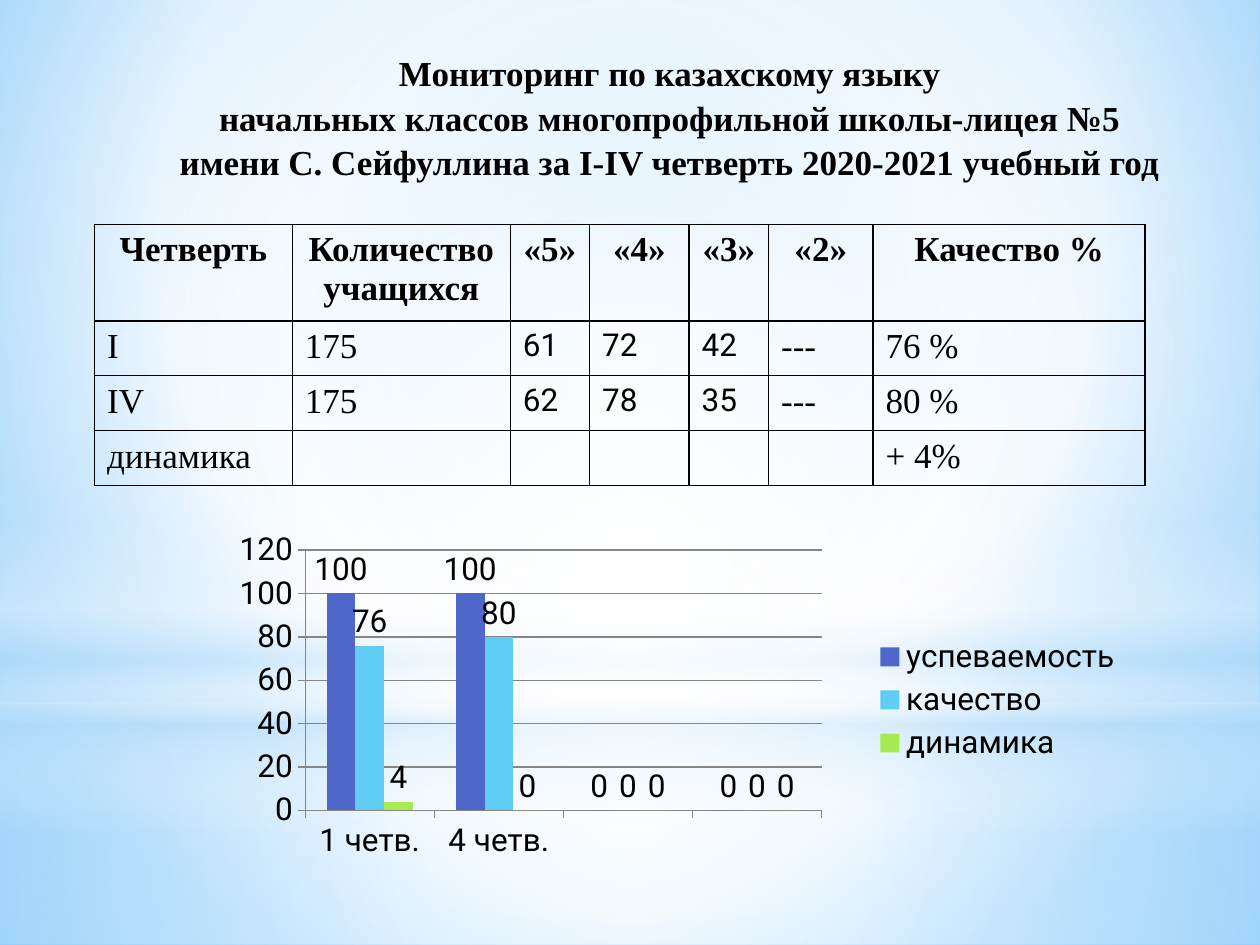
"""Build the Kazakh language monitoring slide with its table and chart."""
from dataclasses import dataclass

from lxml.etree import SubElement
from pptx import Presentation
from pptx.chart.data import CategoryChartData
from pptx.dml.color import RGBColor
from pptx.enum.chart import XL_CHART_TYPE, XL_LABEL_POSITION, XL_LEGEND_POSITION, XL_TICK_MARK
from pptx.enum.shapes import MSO_SHAPE
from pptx.enum.text import PP_ALIGN
from pptx.oxml import parse_xml
from pptx.oxml.ns import nsdecls, qn
from pptx.util import Inches, Pt

COLORS = {
    "text": "000000", "axis": "868686", "white": "FFFFFF", "haze": "B4DCFA",
    "sky": "9ED5FF", "deep": "5BB9FF",
    "progress": "4E67C8", "quality": "5ECCF3", "change": "A7EA52",
}
SERIF, SANS = "Times New Roman", "Roboto"
SLIDE_WIDTH, SLIDE_HEIGHT = Inches(10), Inches(7.5)
CENTER = (50, 50, 50, 50)


@dataclass(frozen=True)
class Area:
    """Position and size in percent of the slide."""
    left: float
    top: float
    width: float
    height: float

    def lengths(self) -> tuple[int, ...]:
        """Return left, top, width and height in EMU."""
        return (across(self.left), down(self.top), across(self.width), down(self.height))


@dataclass(frozen=True)
class Gradient:
    """Stops of position, color name and opacity; linear when focus is None."""
    stops: tuple[tuple[int, str, int], ...]
    focus: tuple[int, ...] | None = CENTER


@dataclass(frozen=True)
class Glow:
    """One translucent background shape."""
    preset: MSO_SHAPE
    area: Area
    gradient: Gradient


@dataclass(frozen=True)
class Series:
    """One chart series."""
    name: str
    values: tuple[int, ...]
    color: str


BACKDROP = Gradient(((0, "sky", 100), (60, "white", 100), (100, "deep", 100)), (20, 10, 20, 60))
GLOWS = (
    Glow(MSO_SHAPE.RECTANGLE, Area(0, 74.4, 100, 25.6),
         Gradient(((0, "white", 91), (37, "white", 76), (100, "haze", 79)))),
    Glow(MSO_SHAPE.RECTANGLE, Area(0, 0, 100, 74.4),
         Gradient(((0, "white", 89), (48, "white", 62), (100, "haze", 79)))),
    Glow(MSO_SHAPE.RECTANGLE, Area(0, 54.93, 100, 33.33),
         Gradient(((0, "white", 0), (29, "white", 30), (45, "haze", 40),
                   (55, "white", 26), (65, "haze", 60), (100, "white", 0)), None)),
    Glow(MSO_SHAPE.OVAL, Area(0, 23.33, 100, 74.4),
         Gradient(((0, "white", 100), (56, "white", 0)))),
)
TITLE = (
    "Мониторинг по казахскому языку",
    "начальных классов многопрофильной школы-лицея №5 "
    "имени С. Сейфуллина за І-ІV четверть 2020-2021 учебный год",
)
COLUMN_SHARES = (15.7, 17.3, 6.3, 7.9, 6.3, 8.3, 21.6)
ROW_SHARES = (10.2, 5.8, 5.8, 5.8)
SANS_COLUMNS = range(2, 5)
ROWS = (
    ("Четверть", "Количество учащихся", "«5»", "«4»", "«3»", "«2»", "Качество %"),
    ("І", "175", "61", "72", "42", "---", "76 %"),
    ("ІV", "175", "62", "78", "35", "---", "80 %"),
    ("динамика", "", "", "", "", "", "+ 4%"),
)
CATEGORIES = ("1 четв.", "4 четв.", " ", " ")
SERIES = (
    Series("успеваемость", (100, 100, 0, 0), "progress"),
    Series("качество", (76, 80, 0, 0), "quality"),
    Series("динамика", (4, 0, 0, 0), "change"),
)
PLOT_LAYOUT = (("layoutTarget", "inner"), ("xMode", "edge"), ("yMode", "edge"),
               ("x", "0.1"), ("y", "0.08"), ("w", "0.56"), ("h", "0.73"))


def across(percent: float) -> int:
    return round(SLIDE_WIDTH * percent / 100)


def down(percent: float) -> int:
    return round(SLIDE_HEIGHT * percent / 100)


def color(name: str) -> RGBColor:
    return RGBColor.from_string(COLORS[name])


def paint(parent, gradient: Gradient) -> None:
    """Replace the solid fill below parent by a gradient."""
    stops = "".join(
        f'<a:gs pos="{position * 1000}"><a:srgbClr val="{COLORS[name]}">'
        f'<a:alpha val="{opacity * 1000}"/></a:srgbClr></a:gs>'
        for position, name, opacity in gradient.stops)
    if gradient.focus is None:
        direction = '<a:lin ang="5400000" scaled="0"/>'
    else:
        edges = " ".join(f'{side}="{share * 1000}"' for side, share in zip("ltrb", gradient.focus))
        direction = f'<a:path path="circle"><a:fillToRect {edges}/></a:path>'
    fill = parse_xml(f'<a:gradFill {nsdecls("a")} rotWithShape="1">'
                     f'<a:gsLst>{stops}</a:gsLst>{direction}</a:gradFill>')
    parent.replace(parent.find(qn("a:solidFill")), fill)


def add_glow(page, glow: Glow) -> None:
    shape = page.shapes.add_shape(glow.preset, *glow.area.lengths())
    shape.shadow.inherit = False
    shape.line.fill.background()
    shape.fill.solid()
    paint(shape.element.spPr, glow.gradient)


def add_span(para, text: str, size: int = 20, face: str = SERIF, bold: bool = False) -> None:
    span = para.add_run()
    span.text = text
    span.font.size = Pt(size)
    span.font.name = face
    span.font.bold = bold
    span.font.color.rgb = color("text")


def add_title(page, area: Area) -> None:
    frame = page.shapes.add_textbox(*area.lengths()).text_frame
    frame.word_wrap = True
    for index, text in enumerate(TITLE):
        para = frame.add_paragraph() if index else frame.paragraphs[0]
        para.alignment = PP_ALIGN.CENTER
        para.line_spacing = 1.06
        add_span(para, text, bold=True)


def add_borders(cell) -> None:
    properties = cell._tc.get_or_add_tcPr()
    for index, side in enumerate("LRTB"):
        properties.insert(index, parse_xml(
            f'<a:ln{side} {nsdecls("a")} w="12700"><a:solidFill>'
            f'<a:srgbClr val="{COLORS["text"]}"/></a:solidFill></a:ln{side}>'))


def add_marks_table(page, area: Area) -> None:
    table = page.shapes.add_table(len(ROWS), len(COLUMN_SHARES), *area.lengths()).table
    for column, share in zip(table.columns, COLUMN_SHARES):
        column.width = across(share)
    for row, share in zip(table.rows, ROW_SHARES):
        row.height = down(share)
    for row_index, texts in enumerate(ROWS):
        header = row_index == 0
        for column_index, text in enumerate(texts):
            cell = table.cell(row_index, column_index)
            cell.fill.background()
            add_borders(cell)
            para = cell.text_frame.paragraphs[0]
            para.alignment = PP_ALIGN.CENTER if header else PP_ALIGN.LEFT
            sans = not header and column_index in SANS_COLUMNS
            if text:
                add_span(para, text, 18 if sans else 20, SANS if sans else SERIF, header)


def add_marks_chart(page, area: Area) -> None:
    data = CategoryChartData()
    data.categories = CATEGORIES
    for series in SERIES:
        data.add_series(series.name, series.values)
    chart = page.shapes.add_chart(XL_CHART_TYPE.COLUMN_CLUSTERED, *area.lengths(), data).chart
    chart.has_title = False
    chart.font.size, chart.font.name = Pt(18), SANS
    chart.font.color.rgb = color("text")
    chart.has_legend = True
    chart.legend.position = XL_LEGEND_POSITION.RIGHT
    chart.legend.include_in_layout = False
    plot = chart.plots[0]
    plot.gap_width, plot.overlap, plot.vary_by_categories = 150, 0, False
    for drawn, series in zip(plot.series, SERIES):
        drawn.format.fill.solid()
        drawn.format.fill.fore_color.rgb = color(series.color)
        drawn.data_labels.show_value = True
        drawn.data_labels.position = XL_LABEL_POSITION.OUTSIDE_END
    scale = chart.value_axis
    scale.minimum_scale, scale.maximum_scale, scale.major_unit = 0, 120, 20
    scale.has_major_gridlines = True
    for axis in (chart.category_axis, scale):
        axis.major_tick_mark = XL_TICK_MARK.OUTSIDE
    for part in (chart.category_axis, scale, scale.major_gridlines):
        part.format.line.color.rgb = color("axis")
        part.format.line.width = Pt(0.75)
    plot_area = chart.element.chart.plotArea
    for old in plot_area.findall(qn("c:layout")):
        plot_area.remove(old)
    layout = parse_xml(f'<c:layout {nsdecls("c")}><c:manualLayout/></c:layout>')
    for name, value in PLOT_LAYOUT:
        SubElement(layout[0], qn(f"c:{name}")).set("val", value)
    plot_area.insert(0, layout)


def main() -> None:
    deck = Presentation()
    deck.slide_width, deck.slide_height = SLIDE_WIDTH, SLIDE_HEIGHT
    page = deck.slides.add_slide(deck.slide_layouts[6])
    page.background.fill.solid()
    paint(page.element.find(".//" + qn("p:bgPr")), BACKDROP)
    for glow in GLOWS:
        add_glow(page, glow)
    add_title(page, Area(13, 4.53, 80.3, 14.8))
    add_marks_table(page, Area(7.5, 23.73, 83.5, 27.6))
    add_marks_chart(page, Area(16.9, 55.2, 73.2, 37.73))
    deck.save("out.pptx")


if __name__ == "__main__":
    main()
